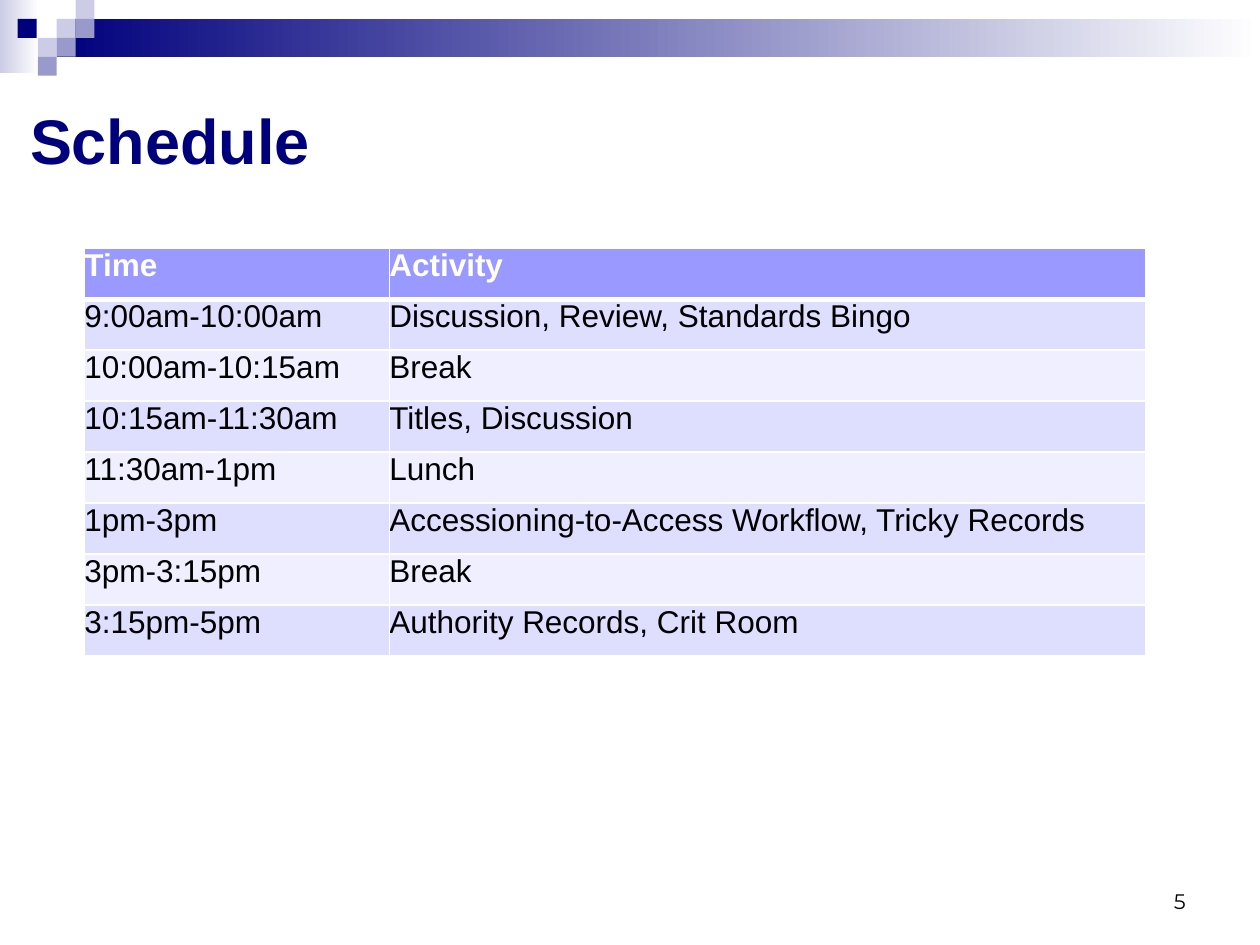
from dataclasses import dataclass

import pptx
import pptx.dml.color
import pptx.enum.shapes
import pptx.enum.text
import pptx.oxml
import pptx.oxml.ns
import pptx.util
from pptx.util import Inches


@dataclass(frozen=True)
class Theme:
    navy: str = "00007D"
    lavender: str = "CCCCE6"
    violet: str = "9999CC"
    header: str = "9999FF"
    odd_row: str = "DEDEFF"
    even_row: str = "EFEFFF"
    white: str = "FFFFFF"
    black: str = "000000"
    title_size: int = 36
    table_size: int = 18
    number_size: int = 12
    font: str = "Arial"
    number_font: str = "Montserrat"


theme = Theme()
rgb = pptx.dml.color.RGBColor.from_string


def add_block(left, top, width, height, color, fade_to=None):
    """Draw a borderless rectangle, fading left to right if fade_to is given."""
    block = slide.shapes.add_shape(
        pptx.enum.shapes.MSO_SHAPE.RECTANGLE,
        Inches(left), Inches(top), Inches(width), Inches(height))
    block.shadow.inherit = False
    block.line.fill.background()
    if fade_to:
        block.fill.gradient()
        block.fill.gradient_angle = 0
        for stop, stop_color in zip(block.fill.gradient_stops, (color, fade_to)):
            stop.color.rgb = rgb(stop_color)
    else:
        block.fill.solid()
        block.fill.fore_color.rgb = rgb(color)


def add_run(paragraph, text, size, color, font=theme.font, bold=False):
    run = paragraph.add_run()
    run.text = text
    run.font.name = font
    run.font.size = pptx.util.Pt(size)
    run.font.bold = bold
    run.font.color.rgb = rgb(color)


deck = pptx.Presentation()
deck.slide_width, deck.slide_height = Inches(10), Inches(7.5)
slide = deck.slides.add_slide(deck.slide_layouts[6])

# Banner
add_block(0, 0, 0.31, 0.58, theme.lavender, theme.white)
add_block(0.45, 0.15, 9.55, 0.3, theme.navy, theme.white)
tile = 0.15
for left, top, color in [
    (0.45, 0.15, theme.lavender),
    (0.6, 0, theme.lavender),
    (0.6, 0.15, theme.violet),
    (0.3, 0.3, theme.lavender),
    (0.14, 0.15, theme.navy),
    (0.45, 0.3, theme.violet),
    (0.3, 0.45, theme.violet),
]:
    add_block(left, top, tile, tile, color)

# Schedule table
sessions = [
    ("Time", "Activity"),
    ("9:00am-10:00am", "Discussion, Review, Standards Bingo"),
    ("10:00am-10:15am", "Break"),
    ("10:15am-11:30am", "Titles, Discussion"),
    ("11:30am-1pm", "Lunch"),
    ("1pm-3pm", "Accessioning-to-Access Workflow, Tricky Records"),
    ("3pm-3:15pm", "Break"),
    ("3:15pm-5pm", "Authority Records, Crit Room"),
]
table_height = Inches(3.24)
schedule = slide.shapes.add_table(
    len(sessions), 2, Inches(0.67), Inches(1.97), Inches(8.42), table_height).table
schedule.columns[0].width = Inches(2.42)
schedule.columns[1].width = Inches(6)

for row_index, session in enumerate(sessions):
    schedule.rows[row_index].height = table_height // len(sessions)
    is_header = row_index == 0
    row_fill = theme.header if is_header else (
        theme.odd_row if row_index % 2 else theme.even_row)
    borders = {"L": 1, "R": 1,
               "T": 3 if row_index == 1 else 1,
               "B": 3 if is_header else 1}
    for column_index, text in enumerate(session):
        cell = schedule.cell(row_index, column_index)
        cell.margin_left = cell.margin_right = 0
        cell.margin_top = cell.margin_bottom = 0
        for side, points in borders.items():
            cell._tc.get_or_add_tcPr().append(pptx.oxml.parse_xml(
                f'<a:ln{side} {pptx.oxml.ns.nsdecls("a")} w="{pptx.util.Pt(points)}">'
                f'<a:solidFill><a:srgbClr val="{theme.white}"/></a:solidFill>'
                f'</a:ln{side}>'))
        cell.fill.solid()
        cell.fill.fore_color.rgb = rgb(row_fill)
        add_run(cell.text_frame.paragraphs[0], text, theme.table_size,
                theme.white if is_header else theme.black, bold=is_header)

# Title
title = slide.shapes.add_textbox(
    Inches(0.14), Inches(0.75), Inches(9.67), Inches(0.71)).text_frame
title.word_wrap = True
title.vertical_anchor = pptx.enum.text.MSO_ANCHOR.MIDDLE
add_run(title.paragraphs[0], "Schedule", theme.title_size, theme.navy, bold=True)

# Page number
page_number = slide.shapes.add_textbox(
    Inches(7.18), Inches(7), Inches(2.33), Inches(0.5)).text_frame
page_number.word_wrap = True
page_number.paragraphs[0].alignment = pptx.enum.text.PP_ALIGN.RIGHT
add_run(page_number.paragraphs[0], "5", theme.number_size, theme.black,
        font=theme.number_font)

deck.save("out.pptx")
